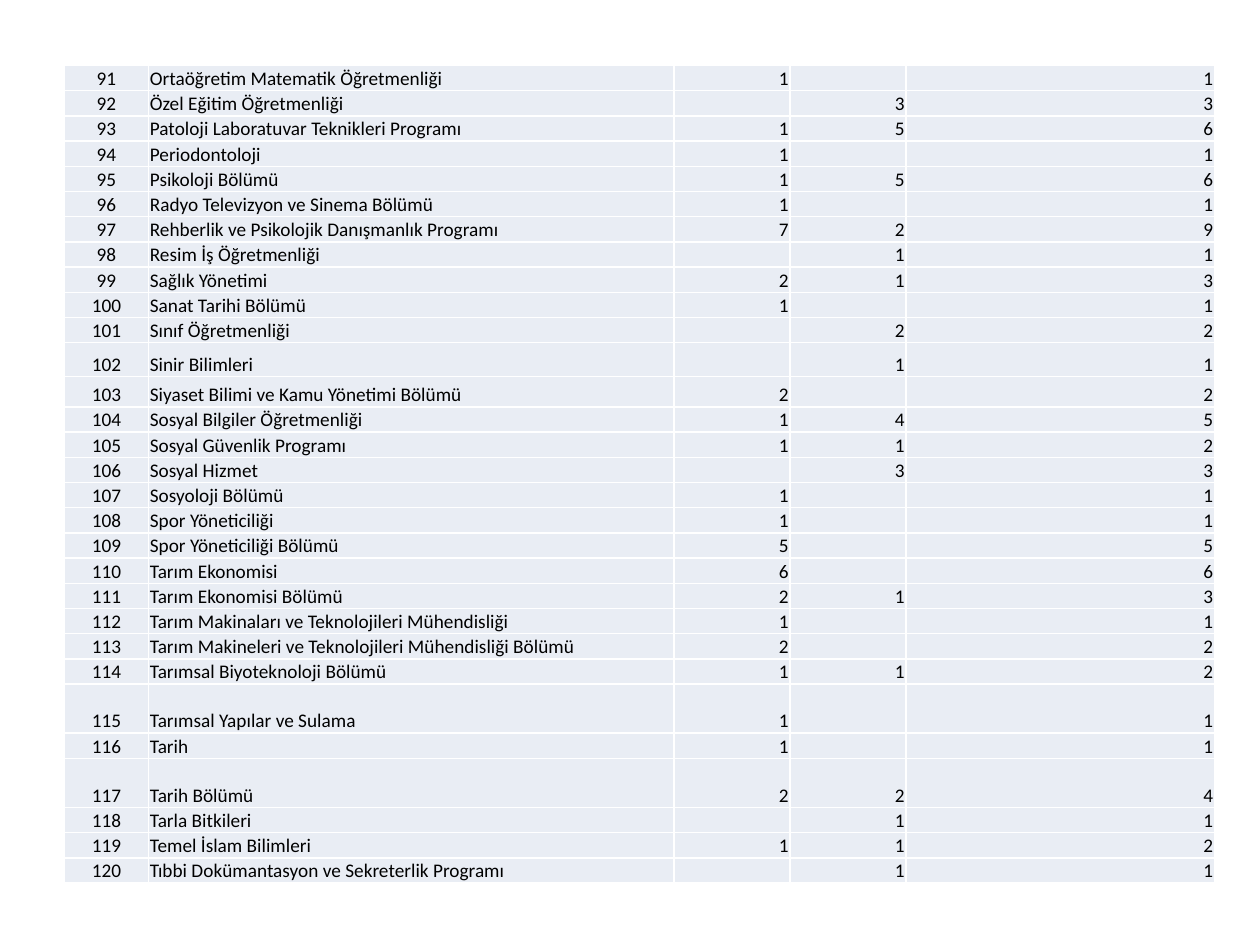
from lxml.etree import SubElement
from pptx import Presentation
from pptx.dml.color import RGBColor
from pptx.enum.text import MSO_ANCHOR, PP_ALIGN
from pptx.oxml.ns import qn
from pptx.util import Inches, Pt

# Programme name, first count, second count; the total is their sum
first = 91
data = [
    ("Ortaöğretim Matematik Öğretmenliği", 1, 0),
    ("Özel Eğitim Öğretmenliği", 0, 3),
    ("Patoloji Laboratuvar Teknikleri Programı", 1, 5),
    ("Periodontoloji", 1, 0),
    ("Psikoloji Bölümü", 1, 5),
    ("Radyo Televizyon ve Sinema Bölümü", 1, 0),
    ("Rehberlik ve Psikolojik Danışmanlık Programı", 7, 2),
    ("Resim İş Öğretmenliği", 0, 1),
    ("Sağlık Yönetimi", 2, 1),
    ("Sanat Tarihi Bölümü", 1, 0),
    ("Sınıf Öğretmenliği", 0, 2),
    ("Sinir Bilimleri", 0, 1),
    ("Siyaset Bilimi ve Kamu Yönetimi Bölümü", 2, 0),
    ("Sosyal Bilgiler Öğretmenliği", 1, 4),
    ("Sosyal Güvenlik Programı", 1, 1),
    ("Sosyal Hizmet", 0, 3),
    ("Sosyoloji Bölümü", 1, 0),
    ("Spor Yöneticiliği", 1, 0),
    ("Spor Yöneticiliği Bölümü", 5, 0),
    ("Tarım Ekonomisi", 6, 0),
    ("Tarım Ekonomisi Bölümü", 2, 1),
    ("Tarım Makinaları ve Teknolojileri Mühendisliği", 1, 0),
    ("Tarım Makineleri ve Teknolojileri Mühendisliği Bölümü", 2, 0),
    ("Tarımsal Biyoteknoloji Bölümü", 1, 1),
    ("Tarımsal Yapılar ve Sulama", 1, 0),
    ("Tarih", 1, 0),
    ("Tarih Bölümü", 2, 2),
    ("Tarla Bitkileri", 0, 1),
    ("Temel İslam Bilimleri", 1, 1),
    ("Tıbbi Dokümantasyon ve Sekreterlik Programı", 0, 1),
]
cols = [0.67, 4.17, 0.92, 0.92, 2.45]
row = 0.2
tall = {102: 0.27, 103: 0.24, 115: 0.39, 117: 0.39}
sides = [PP_ALIGN.CENTER, PP_ALIGN.LEFT] + [PP_ALIGN.RIGHT] * 3


def color(code):
    return RGBColor.from_string(code)


def write(cell, text, align, size=11, font="Calibri", ink="000000", fill="E9EDF4", edge="FFFFFF"):
    cell.margin_left = cell.margin_right = cell.margin_top = Inches(0.01)
    cell.margin_bottom = 0
    cell.vertical_anchor = MSO_ANCHOR.BOTTOM
    para = cell.text_frame.paragraphs[0]
    para.alignment = align
    if text:
        run = para.add_run()
        run.text = text
        run.font.size, run.font.name = Pt(size), font
        run.font.color.rgb = color(ink)
    else:  # keeps a blank cell from stretching its row
        SubElement(para._p, qn("a:endParaRPr"), sz=str(size * 100))
    # Borders go ahead of the fill in the cell properties
    props = cell._tc.get_or_add_tcPr()
    for tag in ("a:lnL", "a:lnR", "a:lnT", "a:lnB"):
        line = SubElement(props, qn(tag), w=str(Pt(1)))
        paint = SubElement(line, qn("a:solidFill"))
        SubElement(paint, qn("a:srgbClr"), val=edge)
    cell.fill.solid()
    cell.fill.fore_color.rgb = color(fill)


# Slide
deck = Presentation()
deck.slide_width, deck.slide_height = Inches(10), Inches(7.5)
slide = deck.slides.add_slide(deck.slide_layouts[6])

# Table grid
high = [tall.get(first + i, row) for i in range(len(data))]
table = slide.shapes.add_table(
    len(data), len(cols), Inches(0.51), Inches(0.52), Inches(sum(cols)), Inches(sum(high))
).table
table.first_row = table.horz_banding = False
for col, width in zip(table.columns, cols):
    col.width = Inches(width)

# Table rows
for i, (name, one, two) in enumerate(data):
    table.rows[i].height = Inches(high[i])
    values = [first + i, name, one, two, one + two]
    for j, value in enumerate(values):
        write(table.cell(i, j), str(value or ""), sides[j])

deck.save("out.pptx")
